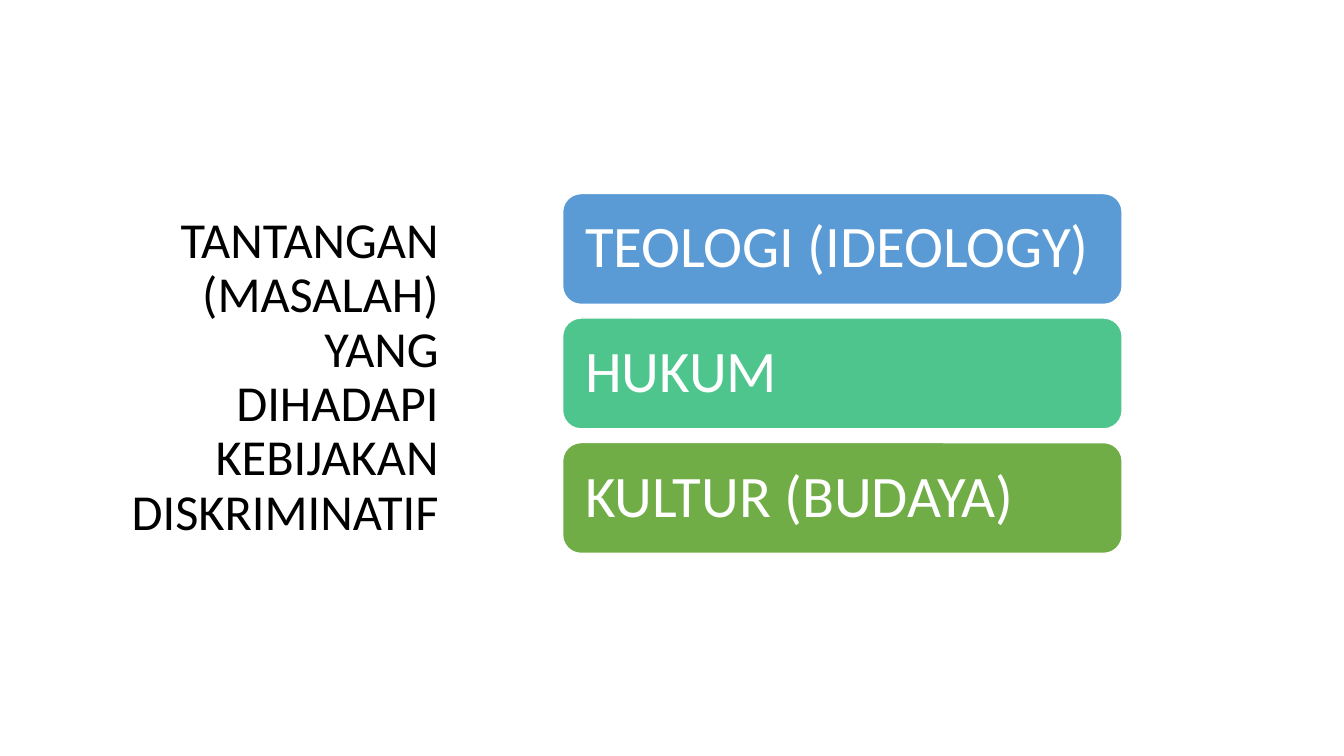
from pptx import Presentation
from pptx import util as u
from pptx.dml.color import RGBColor
from pptx.enum import shapes, text

BLACK = RGBColor(0x00, 0x00, 0x00)
WHITE = RGBColor(0xFF, 0xFF, 0xFF)
BLUE = RGBColor(0x5B, 0x9B, 0xD5)
TEAL = RGBColor(0x4D, 0xC5, 0x8D)
GREEN = RGBColor(0x70, 0xAD, 0x47)

FONT = "Calibri"
HEADING = "TANTANGAN (MASALAH) YANG DIHADAPI KEBIJAKAN DISKRIMINATIF"
CHALLENGES = [
    ("TEOLOGI (IDEOLOGY)", BLUE),
    ("HUKUM", TEAL),
    ("KULTUR (BUDAYA)", GREEN),
]
BAR_SHARE = 0.89  # part of each row's pitch that the bar fills


def write(frame, wording, size, color, align):
    frame.word_wrap = True
    frame.vertical_anchor = text.MSO_ANCHOR.MIDDLE
    paragraph = frame.paragraphs[0]
    paragraph.alignment = align
    paragraph.line_spacing = 0.9
    run = paragraph.add_run()
    run.text = wording
    run.font.name = FONT
    run.font.size = u.Pt(size)
    run.font.color.rgb = color


def add_heading(slide, left, top, width, height):
    heading = slide.shapes.add_textbox(*map(u.Inches, (left, top, width, height)))
    write(heading.text_frame, HEADING, 36, BLACK, text.PP_ALIGN.RIGHT)


def add_challenges(slide, left, top, width, height):
    """Stack one rounded bar per challenge, evenly spaced to fill the box."""
    pitch = height / (len(CHALLENGES) - 1 + BAR_SHARE)
    for row, (challenge, color) in enumerate(CHALLENGES):
        box = (left, top + row * pitch, width, pitch * BAR_SHARE)
        bar = slide.shapes.add_shape(
            shapes.MSO_SHAPE.ROUNDED_RECTANGLE, *map(u.Inches, box))
        bar.shadow.inherit = False
        bar.fill.solid()
        bar.fill.fore_color.rgb = color
        bar.line.color.rgb = WHITE
        bar.line.width = u.Pt(1)
        frame = bar.text_frame
        frame.margin_left = frame.margin_right = u.Inches(0.17)
        frame.margin_top = frame.margin_bottom = u.Inches(0.17)
        write(frame, challenge, 42, WHITE, text.PP_ALIGN.LEFT)


def main():
    deck = Presentation()
    deck.slide_width = u.Inches(13.33)
    deck.slide_height = u.Inches(7.5)
    slide = deck.slides.add_slide(deck.slide_layouts[6])
    add_heading(slide, 1.1, 1.3, 3.35, 4.9)
    add_challenges(slide, 5.58, 1.92, 5.55, 3.57)
    deck.save("out.pptx")


if __name__ == "__main__":
    main()
